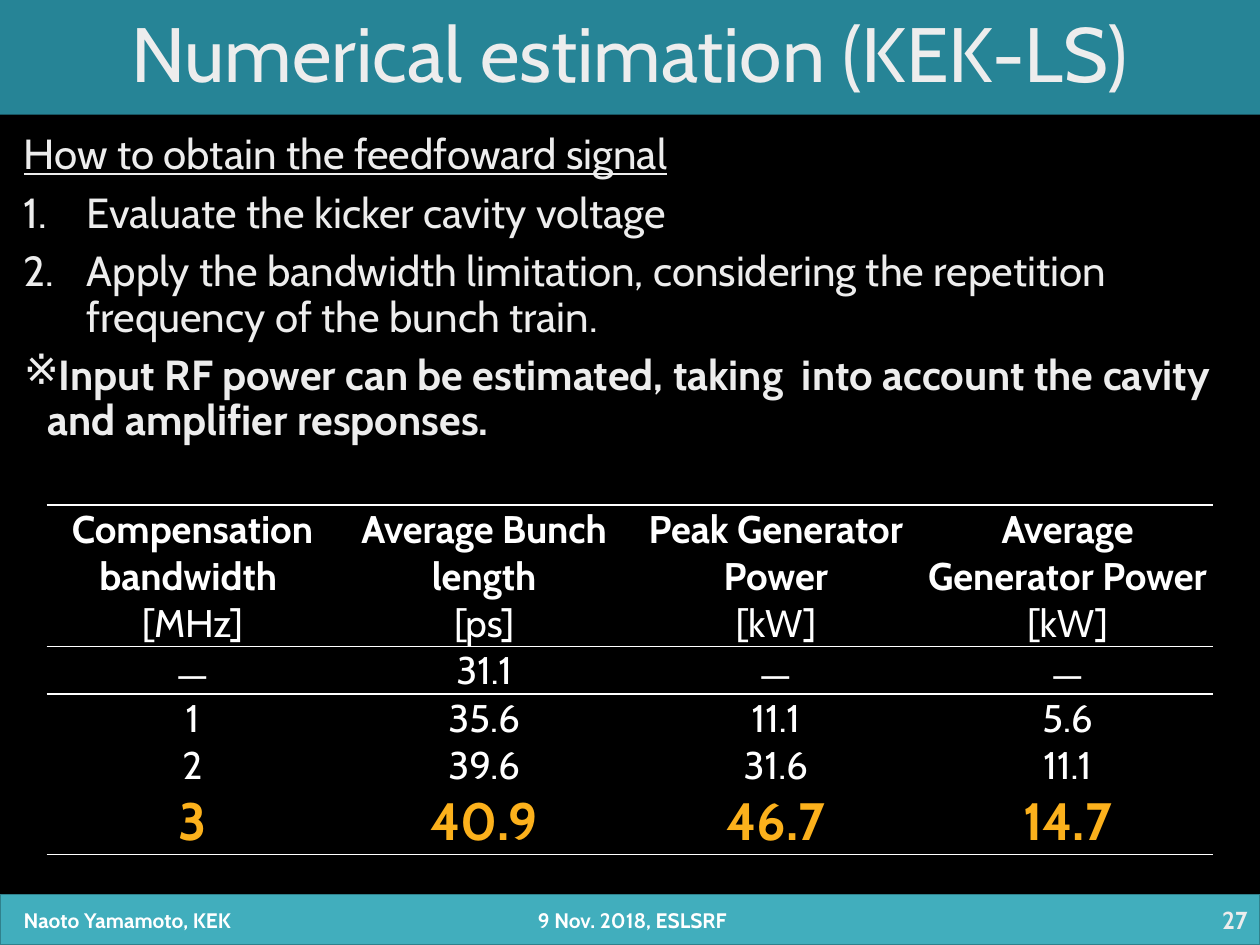
"""Build the slide on numerical estimation of generator power."""
from dataclasses import dataclass

from lxml import etree
from pptx import Presentation
from pptx.dml.color import RGBColor
from pptx.enum.shapes import MSO_SHAPE
from pptx.enum.text import MSO_ANCHOR, PP_ALIGN
from pptx.oxml.ns import qn
from pptx.util import Emu, Inches, Pt

LEFT, CENTER, RIGHT = PP_ALIGN.LEFT, PP_ALIGN.CENTER, PP_ALIGN.RIGHT
MIDDLE, TOP = MSO_ANCHOR.MIDDLE, MSO_ANCHOR.TOP
RECTANGLE = MSO_SHAPE.RECTANGLE


@dataclass(frozen=True)
class Theme:
    font: str = "Cabin"
    background: str = "000000"
    band: str = "268496"
    footer: str = "41AEBD"
    footer_line: str = "30818C"
    soft: str = "EDEDED"
    white: str = "FFFFFF"
    accent: str = "FCB11C"
    title_size: int = 44
    body_size: int = 24
    table_size: int = 22
    accent_size: int = 30
    number_size: int = 14
    footer_size: int = 12


THEME = Theme()
WIDTH, HEIGHT = 10, 7.5
TITLE_HEIGHT, FOOTER_HEIGHT = 0.91, 0.4
FOOTER_TOP = HEIGHT - FOOTER_HEIGHT
MARGIN = 0.09

TITLE = "Numerical estimation (KEK-LS)"
NUMBERED = ("buAutoNum", {"type": "arabicPeriod"})
NOTE = ("buChar", {"char": "※"})
BODY = [
    ("How to obtain the feedfoward signal", None, 0, {"underline": True}),
    ("Evaluate the kicker cavity voltage", NUMBERED, 0.5, {}),
    ("Apply the bandwidth limitation, considering the repetition frequency "
     "of the bunch train.", NUMBERED, 0.5, {}),
    ("Input RF power can be estimated, taking  into account the cavity and "
     "amplifier responses.", NOTE, 0.19, {"bold": True}),
]
FOOTER = "Naoto Yamamoto, KEK\t9 Nov. 2018, ESLSRF"
FOOTER_TAB = 4.08
PAGE_NUMBER = "27"

ROWS = [
    ["Compensation bandwidth ", "Average Bunch length",
     "Peak Generator Power", "Average Generator Power"],
    ["[MHz]", "[ps]", "[kW]", "[kW]"],
    ["－", "31.1", "－", "－"],
    ["1", "35.6", "11.1", "5.6"],
    ["2", "39.6", "31.6", "11.1"],
    ["3", "40.9", "46.7", "14.7"],
]
ROW_HEIGHTS = [0.73, 0.37, 0.37, 0.37, 0.37, 0.52]
RULES = {0, 2, 3, len(ROWS)}
TABLE_LEFT, TABLE_TOP = 0.37, 4.01


def rgb(color):
    return RGBColor.from_string(color)


def style(para, size, color, bold=False, underline=False):
    for span in para.runs:
        font = span.font
        font.name, font.size = THEME.font, Pt(size)
        font.bold, font.underline = bold, underline
        font.color.rgb = rgb(color)


def add_box(page, left, top, width, height, anchor):
    box = page.shapes.add_textbox(*map(Inches, (left, top, width, height)))
    box.text_frame.word_wrap = True
    box.text_frame.vertical_anchor = anchor
    return box.text_frame


def add_title(page):
    title = page.shapes.title
    title.left = title.top = 0
    title.width, title.height = Inches(WIDTH), Inches(TITLE_HEIGHT)
    title.fill.solid()
    title.fill.fore_color.rgb = rgb(THEME.band)
    title.text_frame.text = TITLE
    title.text_frame.vertical_anchor = MIDDLE
    para = title.text_frame.paragraphs[0]
    para.alignment, para.line_spacing = CENTER, 0.9
    style(para, THEME.title_size, THEME.soft)


def add_body(page):
    frame = add_box(page, MARGIN, 1.01, 9.75, 2.8, TOP)
    frame.text = "\n".join(text for text, *_ in BODY)
    for index, (para, item) in enumerate(zip(frame.paragraphs, BODY)):
        _, bullet, indent, look = item
        para.line_spacing = 0.9
        if index:
            para.space_before = Pt(7.5)
        if bullet:
            props = para._p.get_or_add_pPr()
            props.set("marL", str(Inches(indent)))
            props.set("indent", str(-Inches(indent)))
            etree.SubElement(props, qn("a:" + bullet[0]), bullet[1])
        style(para, THEME.body_size, THEME.soft, **look)


def add_footer(page):
    bar = page.shapes.add_shape(
        RECTANGLE, 0, *map(Inches, (FOOTER_TOP, WIDTH, FOOTER_HEIGHT)))
    bar.shadow.inherit = False
    bar.fill.solid()
    bar.fill.fore_color.rgb = rgb(THEME.footer)
    bar.line.color.rgb = rgb(THEME.footer_line)
    bar.line.width = Pt(1)

    frame = add_box(page, MARGIN, FOOTER_TOP, 6.54, FOOTER_HEIGHT, MIDDLE)
    frame.text = FOOTER
    para = frame.paragraphs[0]
    tabs = etree.SubElement(para._p.get_or_add_pPr(), qn("a:tabLst"))
    etree.SubElement(tabs, qn("a:tab"), pos=str(Inches(FOOTER_TAB)), algn="l")
    style(para, THEME.footer_size, THEME.white, bold=True)

    frame = add_box(page, 7.75, FOOTER_TOP, 2.25, FOOTER_HEIGHT, MIDDLE)
    frame.text = PAGE_NUMBER
    frame.paragraphs[0].alignment = RIGHT
    style(frame.paragraphs[0], THEME.number_size, THEME.soft, bold=True)


def set_borders(cell, above, below):
    cell.fill.background()
    props = cell._tc.get_or_add_tcPr()
    sides = {"lnL": False, "lnR": False, "lnT": above, "lnB": below}
    for position, (side, ruled) in enumerate(sides.items()):
        line = etree.Element(qn("a:" + side), w=str(Pt(1)))
        if ruled:
            fill = etree.SubElement(line, qn("a:solidFill"))
            etree.SubElement(fill, qn("a:srgbClr"), val=THEME.white)
        else:
            etree.SubElement(line, qn("a:noFill"))
        props.insert(position, line)


def add_results(page):
    width, height = Inches(WIDTH - 2 * TABLE_LEFT), Inches(sum(ROW_HEIGHTS))
    table = page.shapes.add_table(
        len(ROWS), len(ROWS[0]), Inches(TABLE_LEFT), Inches(TABLE_TOP),
        width, height).table
    table.first_row = table.horz_banding = False
    for column in table.columns:
        column.width = Emu(width // len(ROWS[0]))
    last = len(ROWS) - 1
    for index, (values, row_height) in enumerate(zip(ROWS, ROW_HEIGHTS)):
        table.rows[index].height = Inches(row_height)
        size, color = ((THEME.accent_size, THEME.accent) if index == last
                       else (THEME.table_size, THEME.white))
        for cell, value in zip(table.rows[index].cells, values):
            cell.text = value
            cell.vertical_anchor = MIDDLE
            cell.margin_left = cell.margin_right = cell.margin_top = Inches(0.01)
            cell.margin_bottom = 0
            para = cell.text_frame.paragraphs[0]
            para.alignment = CENTER
            style(para, size, color, bold=index in (0, last))
            set_borders(cell, index in RULES, index + 1 in RULES)


def main():
    deck = Presentation()
    deck.slide_width, deck.slide_height = Inches(WIDTH), Inches(HEIGHT)
    page = deck.slides.add_slide(deck.slide_layouts[5])
    page.background.fill.solid()
    page.background.fill.fore_color.rgb = rgb(THEME.background)
    add_title(page)
    add_body(page)
    add_footer(page)
    add_results(page)
    deck.save("out.pptx")


if __name__ == "__main__":
    main()
